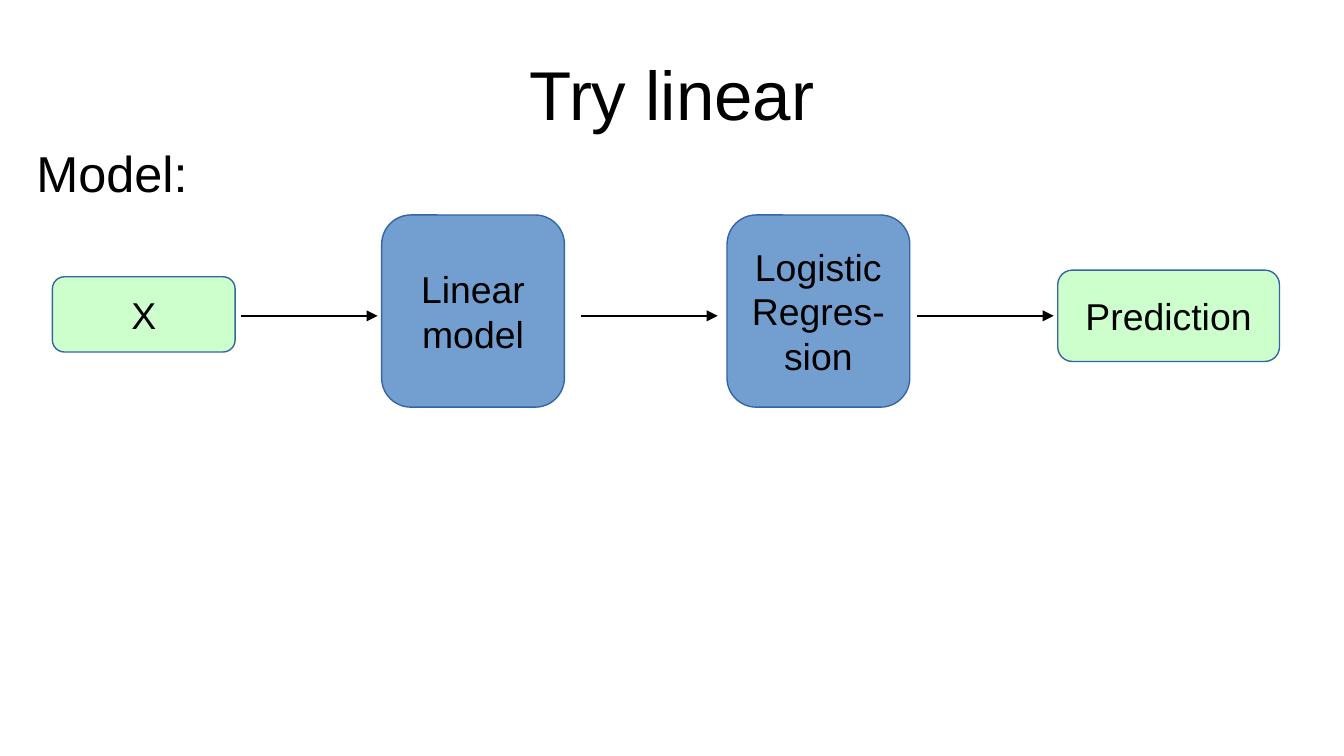
"""Build the slide that shows the linear model pipeline."""
from dataclasses import dataclass

import pptx
import pptx.dml.color
import pptx.enum.shapes
import pptx.enum.text
import pptx.oxml
import pptx.oxml.ns
import pptx.slide
import pptx.text.text
import pptx.util

Inches = pptx.util.Inches
ALIGN = pptx.enum.text.PP_ALIGN

COLORS = {
    "text": "000000",
    "data": "CCFFCC",
    "step": "729FCF",
    "outline": "3465A4",
    "arrow": "000000",
}
FONT = "Arial"
ARROW_Y = 2.35
ARROW_LENGTH = 1.02


@dataclass
class Box:
    """A rounded stage of the pipeline, with lengths in inches."""
    lines: list[str]
    left: float
    top: float
    width: float
    height: float
    fill: str


BOXES = [
    Box(["X"], 0.39, 2.06, 1.36, 0.56, "data"),
    Box(["Linear", "model"], 2.84, 1.6, 1.36, 1.43, "step"),
    Box(["Logistic", "Regres-", "sion"], 5.41, 1.6, 1.36, 1.43, "step"),
    Box(["Prediction"], 7.87, 2.01, 1.65, 0.68, "data"),
]
ARROW_STARTS = [1.79, 4.32, 6.82]


def color(name: str) -> pptx.dml.color.RGBColor:
    """Return the named color."""
    return pptx.dml.color.RGBColor.from_string(COLORS[name])


def write_text(frame: pptx.text.text.TextFrame, lines: list[str], size: float,
               alignment: ALIGN, margin_x: float = 0, margin_y: float = 0) -> None:
    """Write each line as a paragraph in a vertically centered frame."""
    frame.word_wrap = True
    frame.vertical_anchor = pptx.enum.text.MSO_ANCHOR.MIDDLE
    frame.margin_left = frame.margin_right = Inches(margin_x)
    frame.margin_top = frame.margin_bottom = Inches(margin_y)
    for index, line in enumerate(lines):
        paragraph = frame.add_paragraph() if index else frame.paragraphs[0]
        paragraph.alignment = alignment
        run = paragraph.add_run()
        run.text = line
        run.font.name = FONT
        run.font.size = pptx.util.Pt(size)
        run.font.color.rgb = color("text")


def add_label(slide: pptx.slide.Slide, text: str, left: float, top: float,
              width: float, height: float, size: float, alignment: ALIGN) -> None:
    """Add a plain line of text."""
    shape = slide.shapes.add_textbox(Inches(left), Inches(top), Inches(width), Inches(height))
    write_text(shape.text_frame, [text], size, alignment)


def add_box(slide: pptx.slide.Slide, box: Box) -> None:
    """Add a rounded box with centered text."""
    shape = slide.shapes.add_shape(
        pptx.enum.shapes.MSO_SHAPE.ROUNDED_RECTANGLE,
        Inches(box.left), Inches(box.top), Inches(box.width), Inches(box.height))
    shape.adjustments[0] = 0.16
    shape.shadow.inherit = False
    shape.fill.solid()
    shape.fill.fore_color.rgb = color(box.fill)
    shape.line.color.rgb = color("outline")
    shape.line.width = pptx.util.Pt(0.75)
    write_text(shape.text_frame, box.lines, 20, ALIGN.CENTER, 0.08, 0.04)


def add_arrow(slide: pptx.slide.Slide, start: float) -> None:
    """Add a horizontal arrow pointing right."""
    connector = slide.shapes.add_connector(
        pptx.enum.shapes.MSO_CONNECTOR.STRAIGHT,
        Inches(start), Inches(ARROW_Y), Inches(start + ARROW_LENGTH), Inches(ARROW_Y))
    connector.line.color.rgb = color("arrow")
    connector.line.width = pptx.util.Pt(0.75)
    namespace = pptx.oxml.ns.nsdecls("a")
    properties = connector._element.spPr
    properties.find(pptx.oxml.ns.qn("a:ln")).append(
        pptx.oxml.parse_xml(f'<a:tailEnd {namespace} type="triangle"/>'))
    properties.append(pptx.oxml.parse_xml(f"<a:effectLst {namespace}/>"))


def main() -> None:
    """Build and save the presentation."""
    presentation = pptx.Presentation()
    presentation.slide_width = Inches(10)
    presentation.slide_height = Inches(10 * 9 / 16)
    slide = presentation.slides.add_slide(presentation.slide_layouts[6])
    add_label(slide, "Try linear", 0.5, 0.22, 9, 0.94, 37, ALIGN.CENTER)
    for box in BOXES:
        add_box(slide, box)
    for start in ARROW_STARTS:
        add_arrow(slide, start)
    add_label(slide, "Model:", 0.27, 1.05, 3.81, 0.47, 27, ALIGN.LEFT)
    presentation.save("out.pptx")


if __name__ == "__main__":
    main()
